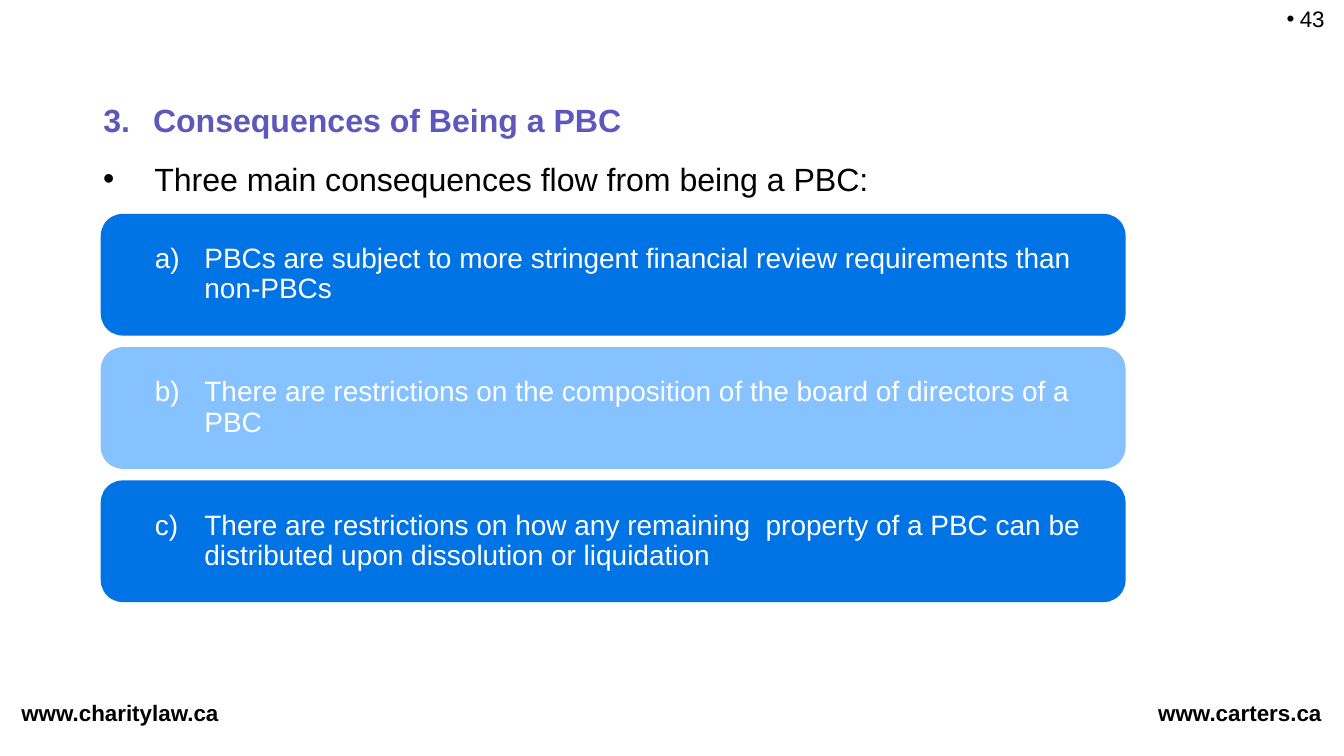
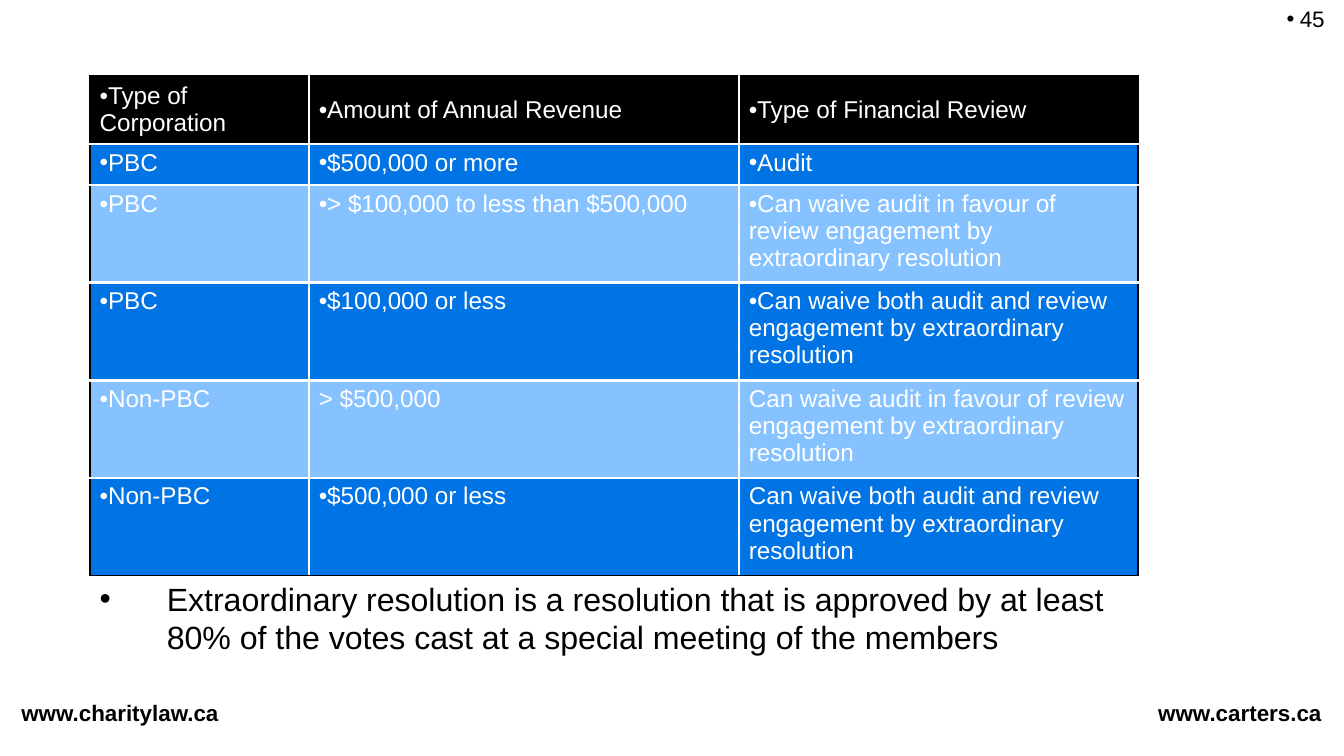
import dataclasses

import lxml.etree
import pptx
import pptx.dml.color
import pptx.enum.shapes
import pptx.enum.text
import pptx.oxml.ns
import pptx.util

Pt = pptx.util.Pt
ALIGN = pptx.enum.text.PP_ALIGN
ANCHOR = pptx.enum.text.MSO_ANCHOR
AUTO_SIZE = pptx.enum.text.MSO_AUTO_SIZE


@dataclasses.dataclass(frozen=True)
class Theme:
    font: str = "Arial"
    black: str = "000000"
    white: str = "FFFFFF"
    title: str = "5F58BC"
    bands: tuple = ("0073E5", "85C2FF")  # alternating blues
    heading_size: float = 17.2
    panel_size: float = 15
    table_size: float = 13
    small_size: float = 12


THEME = Theme()
SLIDE_SIZE = (720, 405)


def rgb(color):
    return pptx.dml.color.RGBColor.from_string(color)


def sub(parent, tag, **attrs):
    """Append a DrawingML element to parent."""
    e = lxml.etree.SubElement(parent, pptx.oxml.ns.qn(tag))
    for name, value in attrs.items():
        e.set(name, str(value))
    return e


def write(tf, text, size, color=THEME.black, bold=False, align=ALIGN.LEFT,
          bullet=None, number=None, margin=0, hang=0, spacing=None):
    """Fill the first paragraph, with a bullet or a letter if asked."""
    p = tf.paragraphs[0]
    pPr = p._p.get_or_add_pPr()
    pPr.set("marL", str(Pt(margin)))
    pPr.set("indent", str(-Pt(hang)))
    if bullet:
        sub(pPr, "a:buFont", typeface=THEME.font)
        sub(pPr, "a:buChar", char=bullet)
    elif number:
        sub(pPr, "a:buFont", typeface=THEME.font)
        sub(pPr, "a:buAutoNum", type="alphaLcParenR", startAt=number)
    else:
        sub(pPr, "a:buNone")
    p.alignment = align
    if spacing:
        p.line_spacing = spacing
    r = p.add_run()
    r.text = text
    r.font.name, r.font.size, r.font.bold = THEME.font, Pt(size), bold
    r.font.color.rgb = rgb(color)


def set_margins(target, x, y):
    target.margin_left = target.margin_right = Pt(x)
    target.margin_top = target.margin_bottom = Pt(y)


def add_text(s, box, text, size, wrap=True, anchor=ANCHOR.TOP, **style):
    tf = s.shapes.add_textbox(*map(Pt, box)).text_frame
    tf.word_wrap = wrap
    tf.vertical_anchor = anchor
    write(tf, text, size, **style)
    return tf


# Parts every slide shares
def add_frame(s, number):
    for left, width, address in ((4.3, 121.7, "www.charitylaw.ca"),
                                 (613.4, 103, "www.carters.ca")):
        tf = add_text(s, (left, 370.8, width, 21.6), address,
                      THEME.small_size, wrap=False, bold=True)
        tf.auto_size = AUTO_SIZE.SHAPE_TO_FIT_TEXT
    add_text(s, (680.4, 1.4, 38.2, 19.4), str(number), THEME.small_size,
             wrap=False, anchor=ANCHOR.BOTTOM, align=ALIGN.CENTER,
             bullet="•", margin=7, hang=7)


def add_title(s, box, text):
    title = s.shapes.title
    title.left, title.top, title.width, title.height = map(Pt, box)
    tf = title.text_frame
    tf.word_wrap = True
    tf.auto_size = AUTO_SIZE.NONE
    tf.vertical_anchor = ANCHOR.MIDDLE
    write(tf, text, THEME.heading_size, THEME.title, bold=True,
          margin=26.6, hang=26.6, spacing=0.85)


# Stack of lettered panels
def add_panels(s, box, items, gap=6.2, rounding=0.18, inset=8):
    left, top, width, height = box
    panel_h = (height - gap * (len(items) - 1)) / len(items)
    # A rounded rectangle already insets its text by 0.29 of the radius
    margin = inset - 0.29 * rounding * panel_h
    for i, item in enumerate(items):
        sp = s.shapes.add_shape(
            pptx.enum.shapes.MSO_SHAPE.ROUNDED_RECTANGLE, Pt(left),
            Pt(top + i * (panel_h + gap)), Pt(width), Pt(panel_h))
        sp.adjustments[0] = rounding
        sp.shadow.inherit = False
        sp.fill.solid()
        sp.fill.fore_color.rgb = rgb(THEME.bands[i % 2])
        sp.line.fill.background()
        tf = sp.text_frame
        tf.word_wrap = True
        tf.vertical_anchor = ANCHOR.MIDDLE
        set_margins(tf, margin, margin)
        write(tf, item, THEME.panel_size, THEME.white, number=i + 1,
              margin=47.5, hang=26.6, spacing=0.9)


# Table with a black outer edge and white inner rules
def add_borders(cell, outer):
    tcPr = cell._tc.get_or_add_tcPr()
    for i, (tag, is_outer) in enumerate(outer.items()):
        color, width = (THEME.black, 1) if is_outer else (THEME.white, 1.5)
        ln = sub(tcPr, tag, w=Pt(width))
        sub(sub(ln, "a:solidFill"), "a:srgbClr", val=color)
        tcPr.insert(i, ln)  # borders come before the fill


def add_review_table(s, box, rows, col_widths, row_heights, unbulleted):
    last_row, last_col = len(rows) - 1, len(col_widths) - 1
    table = s.shapes.add_table(len(rows), len(col_widths),
                               *map(Pt, box)).table
    table.horz_banding = False
    for column, width in zip(table.columns, col_widths):
        column.width = Pt(width)
    for i, values in enumerate(rows):
        table.rows[i].height = Pt(row_heights[i])
        for j, value in enumerate(values):
            cell = table.cell(i, j)
            cell.fill.solid()
            cell.fill.fore_color.rgb = rgb(
                THEME.bands[(i - 1) % 2] if i else THEME.black)
            cell.vertical_anchor = ANCHOR.TOP if i else ANCHOR.MIDDLE
            set_margins(cell, 5.2, 2.7)
            write(cell.text_frame, value, THEME.table_size, THEME.white,
                  bullet=None if (i, j) in unbulleted else "•")
            add_borders(cell, {"a:lnL": j == 0, "a:lnR": j == last_col,
                               "a:lnT": i == 0, "a:lnB": i == last_row})


def consequences_slide(prs):
    s = prs.slides.add_slide(prs.slide_layouts[5])  # title only
    add_title(s, (48.2, 31.7, 560.9, 67.7), "3. \tConsequences of Being a PBC")
    add_text(s, (48.2, 82, 555.8, 30),
             "Three main consequences flow from being a PBC:",
             THEME.heading_size, bullet="•", margin=27.4, hang=27.4)
    add_panels(s, (54, 114.6, 549, 208), (
        "PBCs are subject to more stringent financial review requirements "
        "than non-PBCs",
        "There are restrictions on the composition of the board of directors "
        "of a PBC",
        "There are restrictions on how any remaining  property of a PBC can be "
        "distributed upon dissolution or liquidation",
    ))
    add_frame(s, 43)


def review_slide(prs):
    s = prs.slides.add_slide(prs.slide_layouts[6])  # blank
    waive_audit = ("Can waive audit in favour of review engagement by "
                   "extraordinary resolution")
    waive_both = ("Can waive both audit and review engagement by "
                  "extraordinary resolution")
    rows = (
        ("Type of Corporation", "Amount of Annual Revenue",
         "Type of Financial Review"),
        ("PBC", "$500,000 or more", "Audit"),
        ("PBC", "> $100,000 to less than $500,000", waive_audit),
        ("PBC", "$100,000 or less", waive_both),
        ("Non-PBC", "> $500,000", waive_audit),
        ("Non-PBC", "$500,000 or less", waive_both),
    )
    add_review_table(s, (48.2, 40.5, 561.6, 267.7), rows,
                     col_widths=(117.4, 230.4, 213.8),
                     row_heights=(36.5, 22) + (52.3,) * 4,
                     unbulleted={(4, 1), (4, 2), (5, 2)})
    tf = add_text(s, (48.2, 307.5, 568.8, 67.7),
                  "Extraordinary resolution is a resolution that is approved "
                  "by at least 80% of the votes cast at a special meeting of "
                  "the members",
                  THEME.heading_size, bullet="•", margin=36, hang=36)
    set_margins(tf, 5.2, 2.7)
    add_frame(s, 45)


def main():
    prs = pptx.Presentation()
    prs.slide_width, prs.slide_height = map(Pt, SLIDE_SIZE)
    consequences_slide(prs)
    review_slide(prs)
    prs.save("out.pptx")


if __name__ == "__main__":
    main()
